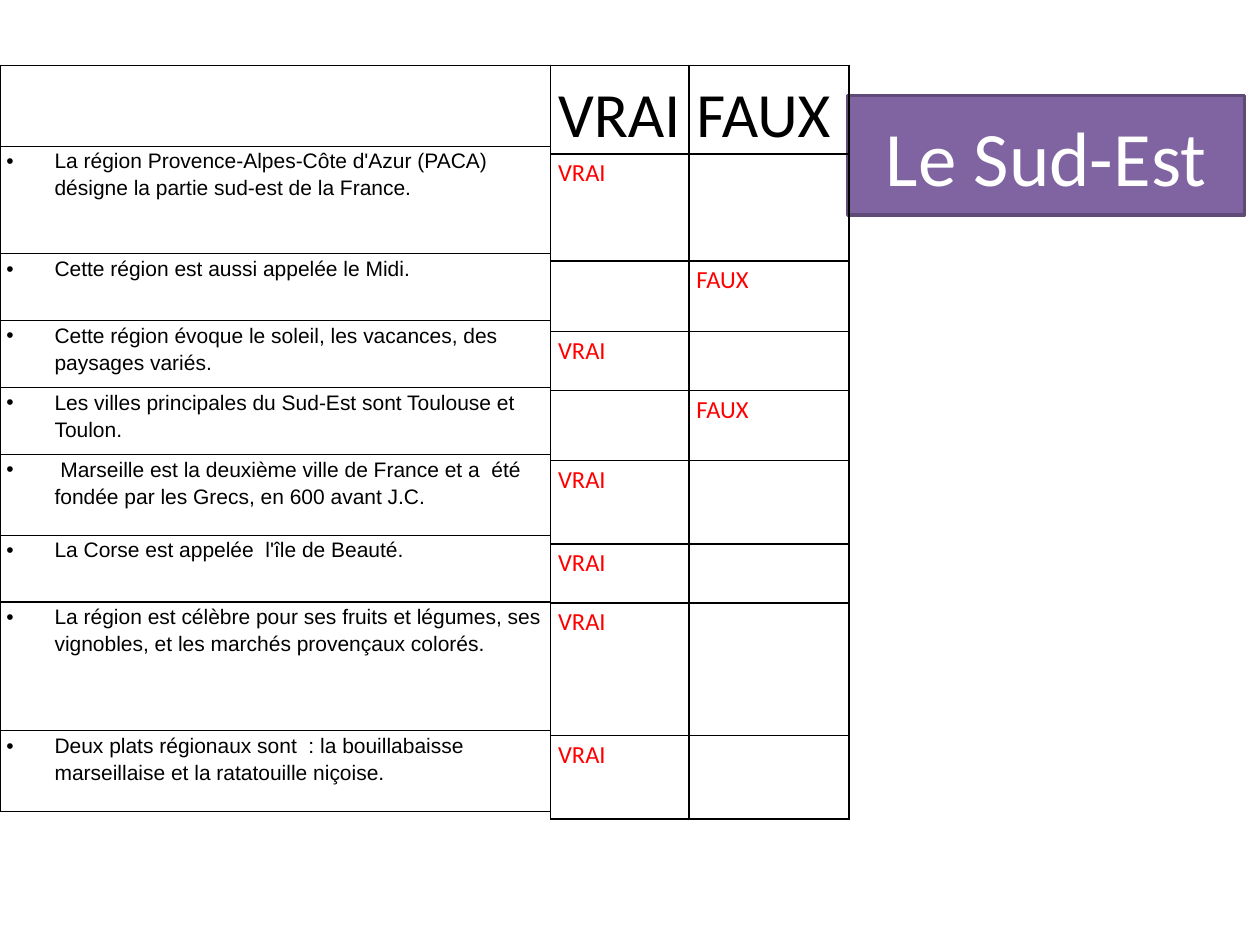
"""Build the true-or-false quiz slide on the South-East of France."""
from dataclasses import dataclass
from lxml import etree
from pptx import Presentation
from pptx.dml.color import RGBColor as Rgb
from pptx.enum.shapes import MSO_SHAPE as Kind
from pptx.enum.text import MSO_ANCHOR as Anchor, PP_ALIGN as Align
from pptx.oxml import parse_xml
from pptx.oxml.ns import nsdecls, qn
from pptx.util import Cm, Pt


@dataclass(frozen=True)
class Theme:
    ink: str = "000000"
    answer: str = "FF0000"
    white: str = "FFFFFF"
    violet: str = "8064A2"
    edge: str = "5F4A78"
    title: int = 44
    head: int = 36
    mark: int = 14
    body: int = 12
    sans: str = "Calibri"
    plain: str = "Arial"


T = Theme()


def write(frame, text, *, size, color=T.ink, font=T.sans, align=Align.LEFT, space=None, bullet=False):
    par = frame.paragraphs[0]
    par.alignment = align
    par.line_spacing = space
    if bullet:
        props = par._p.get_or_add_pPr()
        props.set("marL", str(Cm(0.97)))
        props.set("indent", str(-Cm(0.97)))
        etree.SubElement(props, qn("a:buFont"), typeface=T.plain)
        etree.SubElement(props, qn("a:buChar"), char="•")
        tabs = etree.SubElement(props, qn("a:tabLst"))
        etree.SubElement(tabs, qn("a:tab"), pos=str(Cm(1.27)), algn="l")
    run = par.add_run()
    run.text = text
    run.font.size = Pt(size)
    run.font.name = font
    run.font.color.rgb = Rgb.from_string(color)


def grid(left, cols, rows, pad):
    width, height = Cm(sum(cols)), Cm(sum(rows))
    table = slide.shapes.add_table(len(rows), len(cols), Cm(left), Cm(1.32), width, height).table
    table.first_row = table.horz_banding = False
    for col, size in zip(table.columns, cols):
        col.width = Cm(size)
    for row, size in zip(table.rows, rows):
        row.height = Cm(size)
    for cell in table.iter_cells():
        cell.margin_left = cell.margin_right = Cm(pad)
        cell.margin_top = cell.margin_bottom = 0
        cell.fill.background()
        props = cell._tc.get_or_add_tcPr()
        for spot, side in enumerate("LRTB"):
            props.insert(spot, parse_xml(
                f'<a:ln{side} {nsdecls("a")} w="{Pt(1)}"><a:solidFill>'
                f'<a:srgbClr val="{T.ink}"/></a:solidFill></a:ln{side}>'))
    return table


facts = [
    "La région Provence-Alpes-Côte d'Azur (PACA) désigne la partie sud-est de la France.",
    "Cette région est aussi appelée le Midi.",
    "Cette région évoque le soleil, les vacances, des paysages variés.",
    "Les villes principales du Sud-Est sont Toulouse et Toulon.",
    " Marseille est la deuxième ville de France et a  été  fondée par les Grecs, en 600 avant J.C.",
    "La Corse est appelée  l'île de Beauté.",
    "La région est célèbre pour ses fruits et légumes, ses vignobles, et les marchés provençaux colorés.",
    "Deux plats régionaux sont  : la bouillabaisse marseillaise et la ratatouille niçoise.",
]
heads = ["VRAI", "FAUX"]
marks = [0, 1, 0, 1, 0, 0, 0, 0]

deck = Presentation()
deck.slide_width, deck.slide_height = Cm(25.4), Cm(19.05)
slide = deck.slides.add_slide(deck.slide_layouts[6])

box = slide.shapes.add_shape(Kind.RECTANGLE, Cm(17.09), Cm(1.93), Cm(8), Cm(2.41))
box.shadow.inherit = False
box.fill.solid()
box.fill.fore_color.rgb = Rgb.from_string(T.violet)
box.line.color.rgb = Rgb.from_string(T.edge)
box.line.width = Pt(2)
box.text_frame.word_wrap = True
box.text_frame.vertical_anchor = Anchor.MIDDLE
write(box.text_frame, "Le Sud-Est", size=T.title, color=T.white, align=Align.CENTER)

quiz = grid(0, [11.1], [1.63, 2.16, 1.35, 1.35, 1.35, 1.63, 1.35, 2.59, 1.63], 0.13)
for row, fact in enumerate(facts, 1):
    write(quiz.cell(row, 0).text_frame, fact, size=T.body, font=T.plain, space=1.15, bullet=True)

key = grid(11.1, [2.79, 3.22], [1.68, 2.15, 1.42, 1.19, 1.42, 1.68, 1.19, 2.67, 1.68], 0.15)
for col, head in enumerate(heads):
    write(key.cell(0, col).text_frame, head, size=T.head, space=1.15)
for row, col in enumerate(marks, 1):
    write(key.cell(row, col).text_frame, heads[col], size=T.mark, color=T.answer, space=1.15)

deck.save("out.pptx")
